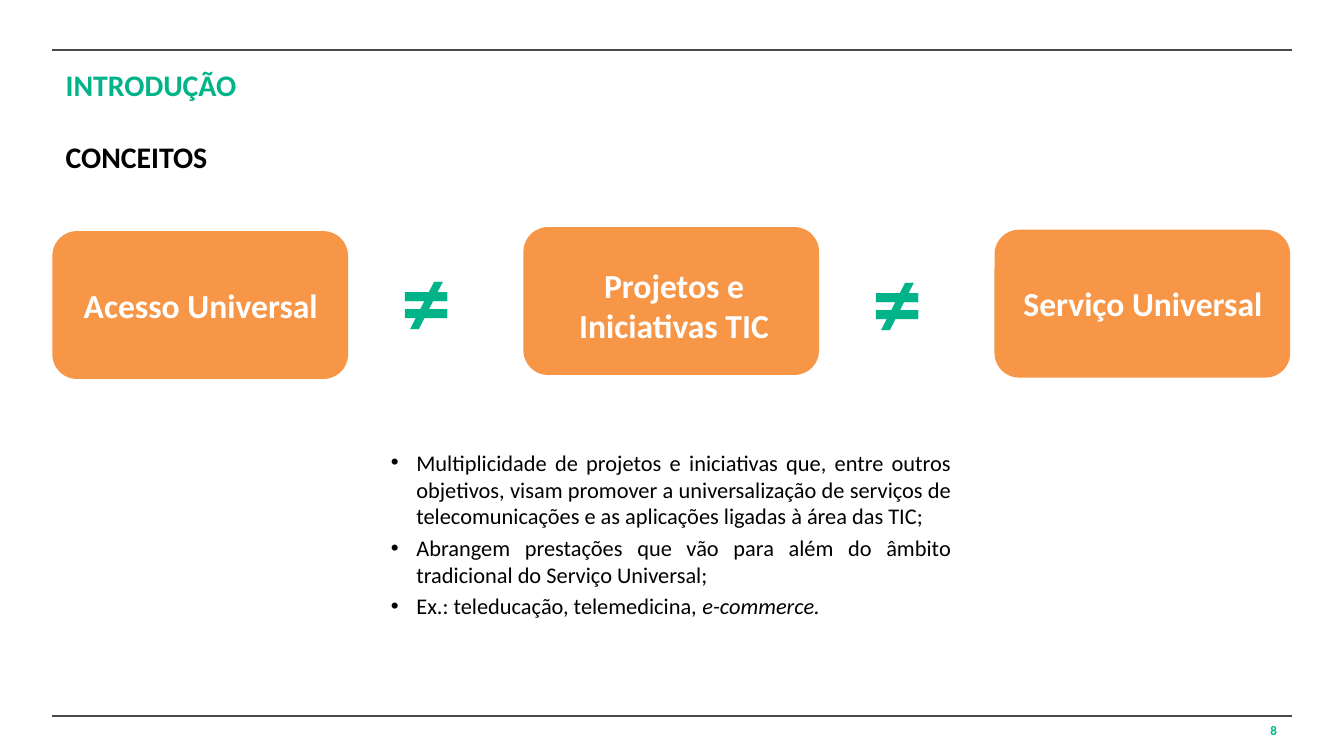
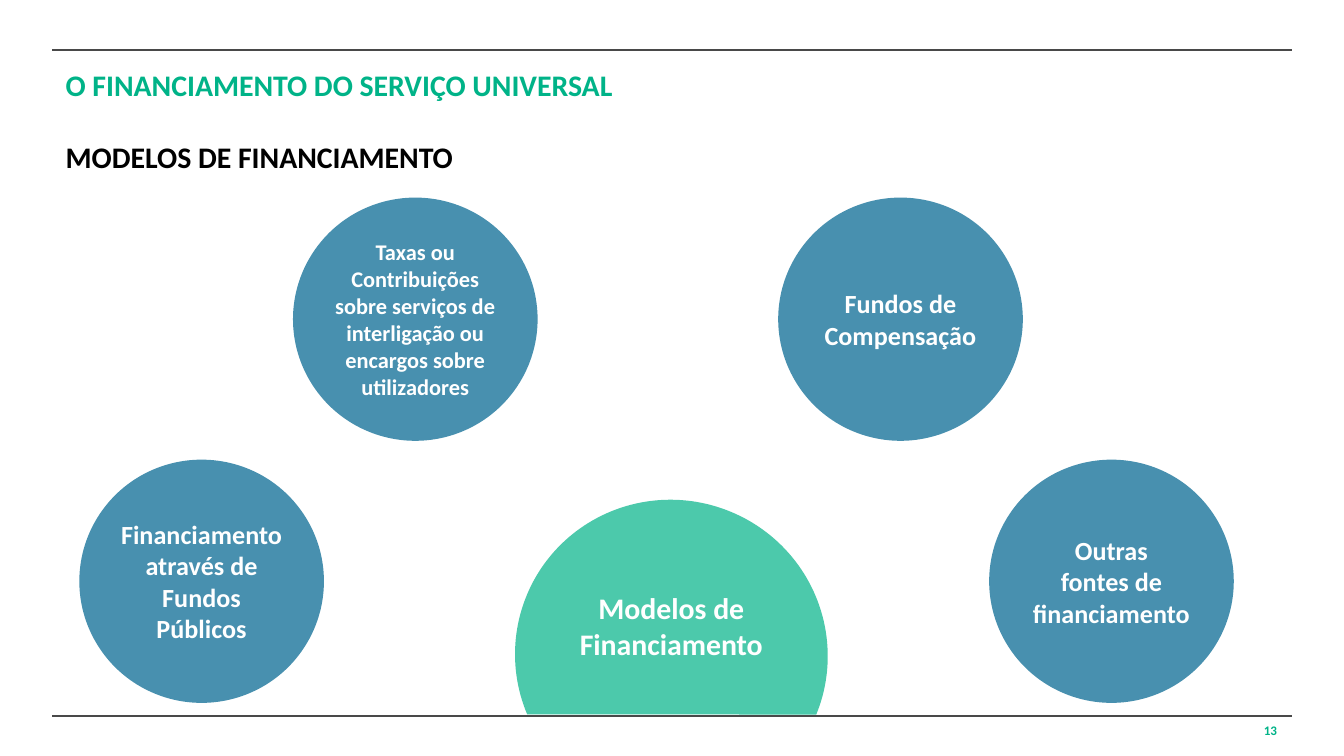
from dataclasses import dataclass

from lxml.etree import SubElement
from pptx import Presentation
from pptx.dml.color import RGBColor
from pptx.enum.shapes import MSO_CONNECTOR, MSO_SHAPE
from pptx.enum.text import MSO_ANCHOR, MSO_AUTO_SIZE, PP_ALIGN
from pptx.oxml.ns import qn
from pptx.shapes.autoshape import Shape
from pptx.slide import Slide
from pptx.text.text import TextFrame, _Paragraph
from pptx.util import Inches, Pt

COLORS = {
    "rule": "494949",
    "green": "00B388",
    "black": "000000",
    "white": "FFFFFF",
    "orange": "F79646",
    "blue": "4890AF",
}
FONT = "Calibri"
SLIDE_WIDTH = Inches(10)
SLIDE_HEIGHT = SLIDE_WIDTH * 9 // 16
MARGIN = 0.39
CONTENT_WIDTH = 9.21
RULE_TOPS = (0.37, 5.33)
CARD_SIZE = (2.2, 1.1)
CARD_STEP = (CONTENT_WIDTH - CARD_SIZE[0]) / 2
CIRCLE_SIZE = (1.82, 1.81)
BULLET_INDENT = 0.19


@dataclass(frozen=True)
class TextStyle:
    size: float
    color: str = "white"
    bold: bool = True
    align: PP_ALIGN = PP_ALIGN.CENTER


@dataclass(frozen=True)
class Card:
    label: str
    top: float
    label_left: float
    label_top: float
    label_width: float
    label_height: float = 0.4


@dataclass(frozen=True)
class Circle:
    left: float
    top: float
    lines: tuple[str, ...]
    size: float = 14


HEADING = TextStyle(16, "green", align=PP_ALIGN.JUSTIFY)
SUBHEADING = TextStyle(16, "black", align=PP_ALIGN.JUSTIFY)
PAGE_NUMBER = TextStyle(7, "green", align=PP_ALIGN.RIGHT)
CARD_LABEL = TextStyle(18)
SIGN = TextStyle(54, "green", align=PP_ALIGN.LEFT)
BODY = TextStyle(12, "black", bold=False, align=PP_ALIGN.JUSTIFY)
HUB_LABEL = TextStyle(16)

CARDS = (
    Card("Acesso Universal", 1.72, 0.51, 2.07, 1.97),
    Card("Projetos e Iniciativas TIC", 1.69, 3.97, 1.92, 2.09, 0.71),
    Card("Serviço Universal", 1.71, 7.46, 2.06, 2.09),
)
SIGN_PLACES = ((2.89, 1.71), (6.39, 1.72))

# Each bullet is a list of (text, italic) runs.
BULLETS = (
    [("Multiplicidade de projetos e iniciativas que, entre outros objetivos, "
      "visam promover a universalização de serviços de telecomunicações e as "
      "aplicações ligadas à área das TIC;", False)],
    [("Abrangem prestações que vão para além do âmbito tradicional do "
      "Serviço Universal;", False)],
    [("Ex.: teleducação, telemedicina, ", False), ("e-commerce.", True)],
)

CIRCLES = (
    Circle(0.59, 3.42, ("Financiamento através de Fundos Públicos",)),
    Circle(2.18, 1.47, ("Taxas ou Contribuições sobre serviços de interligação "
                        "ou encargos sobre utilizadores",), 12),
    Circle(5.79, 1.47, ("Fundos de Compensação",)),
    Circle(7.36, 3.42, ("Outras", "fontes de financiamento")),
)


def rgb(name: str) -> RGBColor:
    return RGBColor.from_string(COLORS[name])


def add_run(paragraph: _Paragraph, text: str, style: TextStyle,
            italic: bool = False) -> None:
    paragraph.alignment = style.align
    run = paragraph.add_run()
    run.text = text
    run.font.name = FONT
    run.font.size = Pt(style.size)
    run.font.bold = style.bold
    run.font.italic = italic
    run.font.color.rgb = rgb(style.color)


def next_paragraph(frame: TextFrame, index: int) -> _Paragraph:
    return frame.add_paragraph() if index else frame.paragraphs[0]


def add_text_box(shapes, left: float, top: float, width: float, height: float,
                 grow: bool = False) -> TextFrame:
    box = shapes.add_textbox(Inches(left), Inches(top),
                             Inches(width), Inches(height))
    frame = box.text_frame
    frame.word_wrap = True
    if grow:
        frame.auto_size = MSO_AUTO_SIZE.SHAPE_TO_FIT_TEXT
    return frame


def add_label(shapes, text: str, style: TextStyle, left: float, top: float,
              width: float, height: float, grow: bool = False) -> None:
    frame = add_text_box(shapes, left, top, width, height, grow)
    add_run(frame.paragraphs[0], text, style)


def add_filled_shape(shapes, kind: MSO_SHAPE, color: str, left: float,
                     top: float, width: float, height: float) -> Shape:
    shape = shapes.add_shape(kind, Inches(left), Inches(top),
                             Inches(width), Inches(height))
    shape.shadow.inherit = False
    shape.fill.solid()
    shape.fill.fore_color.rgb = rgb(color)
    shape.line.fill.background()
    return shape


def add_rule(slide: Slide, top: float) -> None:
    line = slide.shapes.add_connector(
        MSO_CONNECTOR.STRAIGHT, Inches(MARGIN), Inches(top),
        SLIDE_WIDTH - Inches(MARGIN), Inches(top))
    line.line.color.rgb = rgb("rule")
    line.line.width = Pt(1)
    SubElement(line._element.spPr, qn("a:effectLst"))


def add_framed_slide(presentation: Presentation, number: int, heading: str,
                     subheading: str) -> Slide:
    """Add a slide with the rules, page number and two headings."""
    slide = presentation.slides.add_slide(presentation.slide_layouts[6])
    for top in RULE_TOPS:
        add_rule(slide, top)
    shapes = slide.shapes
    add_label(shapes, str(number), PAGE_NUMBER, 7.27, 5.33, 2.33, 0.2)
    add_label(shapes, subheading, SUBHEADING, MARGIN, 0.98, CONTENT_WIDTH, 0.5)
    add_label(shapes, heading, HEADING, MARGIN, 0.45, CONTENT_WIDTH, 0.45)
    return slide


def add_card(slide: Slide, card: Card, left: float) -> None:
    shapes = slide.shapes.add_group_shape().shapes
    add_filled_shape(shapes, MSO_SHAPE.ROUNDED_RECTANGLE, "orange",
                     left, card.top, *CARD_SIZE)
    add_label(shapes, card.label, CARD_LABEL, card.label_left, card.label_top,
              card.label_width, card.label_height, grow=True)


def add_bullets(slide: Slide) -> None:
    frame = add_text_box(slide.shapes, 2.81, 3.29, 4.37, 1.39, grow=True)
    for index, runs in enumerate(BULLETS):
        paragraph = next_paragraph(frame, index)
        properties = paragraph._p.get_or_add_pPr()
        properties.set("marL", str(Inches(BULLET_INDENT)))
        properties.set("indent", str(-Inches(BULLET_INDENT)))
        SubElement(properties, qn("a:buFont"), typeface="Arial")
        SubElement(properties, qn("a:buChar"), char="•")
        if index:
            paragraph.space_before = Pt(0.2 * BODY.size)
        for text, italic in runs:
            add_run(paragraph, text, BODY, italic)


def add_circle(slide: Slide, circle: Circle) -> None:
    shape = add_filled_shape(slide.shapes, MSO_SHAPE.OVAL, "blue",
                             circle.left, circle.top, *CIRCLE_SIZE)
    frame = shape.text_frame
    frame.word_wrap = True
    frame.vertical_anchor = MSO_ANCHOR.MIDDLE
    frame.margin_left = frame.margin_right = Inches(0.04)
    frame.margin_top = frame.margin_bottom = Inches(0.05)
    for index, line in enumerate(circle.lines):
        add_run(next_paragraph(frame, index), line, TextStyle(circle.size))


def add_hub(slide: Slide) -> None:
    """Add the translucent dome that rests on the bottom rule."""
    dome = add_filled_shape(slide.shapes, MSO_SHAPE.CHORD, "green",
                            3.84, 3.71, 2.31, 2.33)
    dome.adjustments[0] = 27
    dome.adjustments[1] = 161.76
    dome.rotation = 112.7
    color = dome._element.spPr.find(qn("a:solidFill")).find(qn("a:srgbClr"))
    SubElement(color, qn("a:alpha"), val="70000")
    add_label(slide.shapes, "Modelos de Financiamento", HUB_LABEL,
              4.17, 4.34, 1.65, 0.64, grow=True)


def build_concepts(presentation: Presentation) -> None:
    slide = add_framed_slide(presentation, 8, "INTRODUÇÃO", "CONCEITOS")
    for index, card in enumerate(CARDS):
        add_card(slide, card, MARGIN + index * CARD_STEP)
    for left, top in SIGN_PLACES:
        add_label(slide.shapes, "≠", SIGN, left, top, 0.71, 1.01, grow=True)
    add_bullets(slide)


def build_funding_models(presentation: Presentation) -> None:
    slide = add_framed_slide(presentation, 13,
                             "O FINANCIAMENTO DO SERVIÇO UNIVERSAL",
                             "MODELOS DE FINANCIAMENTO")
    for circle in CIRCLES:
        add_circle(slide, circle)
    add_hub(slide)


def main() -> None:
    presentation = Presentation()
    presentation.slide_width = SLIDE_WIDTH
    presentation.slide_height = SLIDE_HEIGHT
    build_concepts(presentation)
    build_funding_models(presentation)
    presentation.save("out.pptx")


if __name__ == "__main__":
    main()
